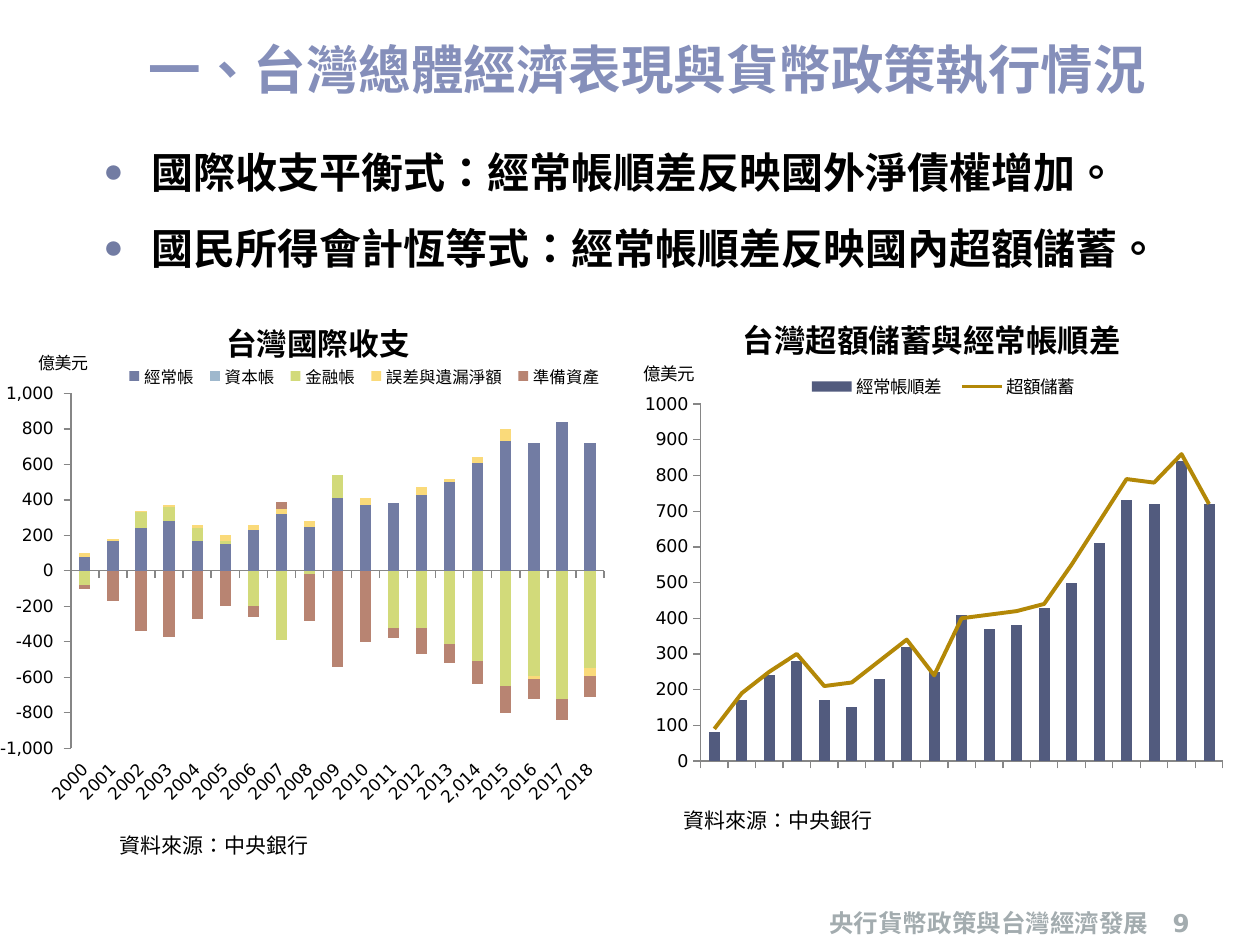
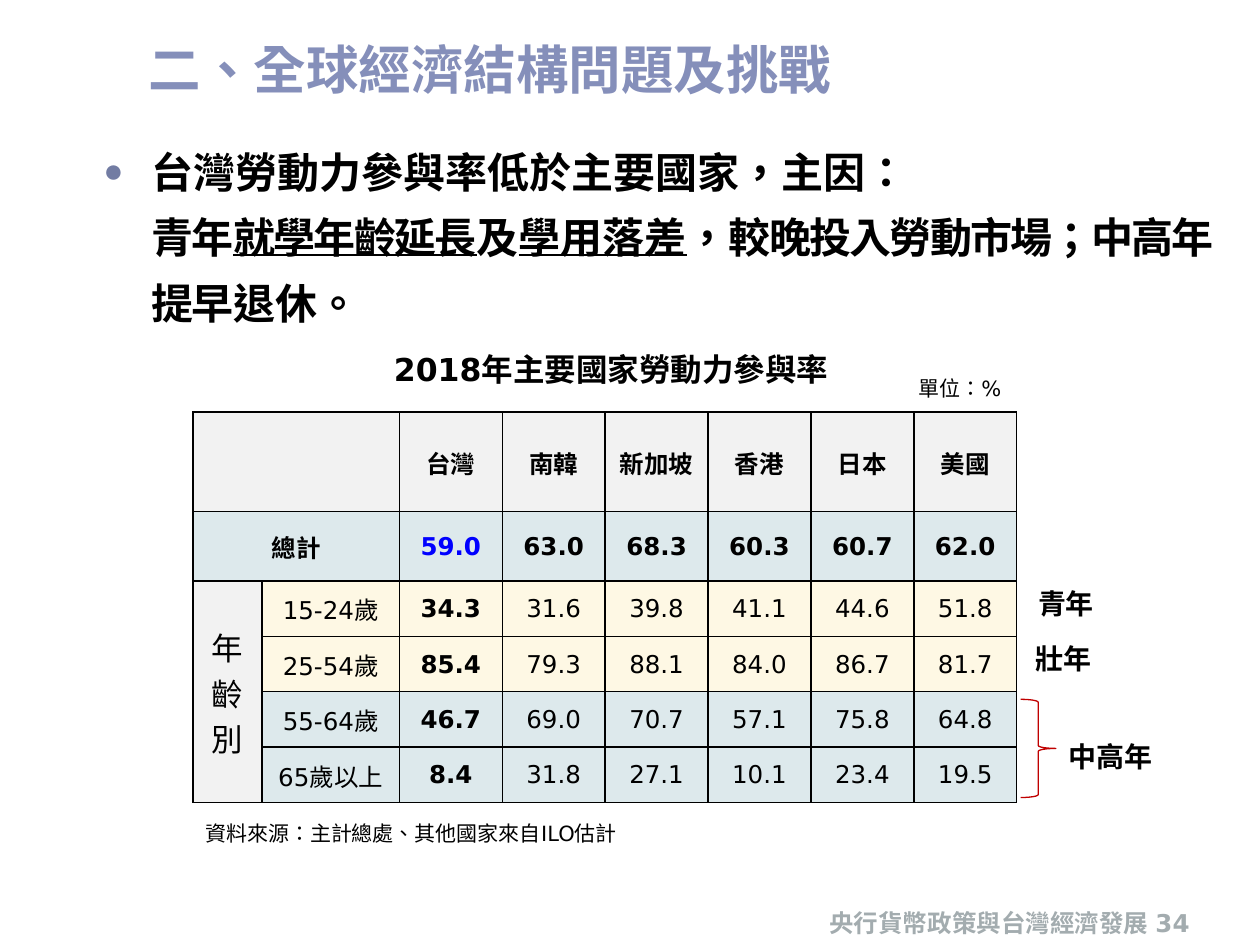
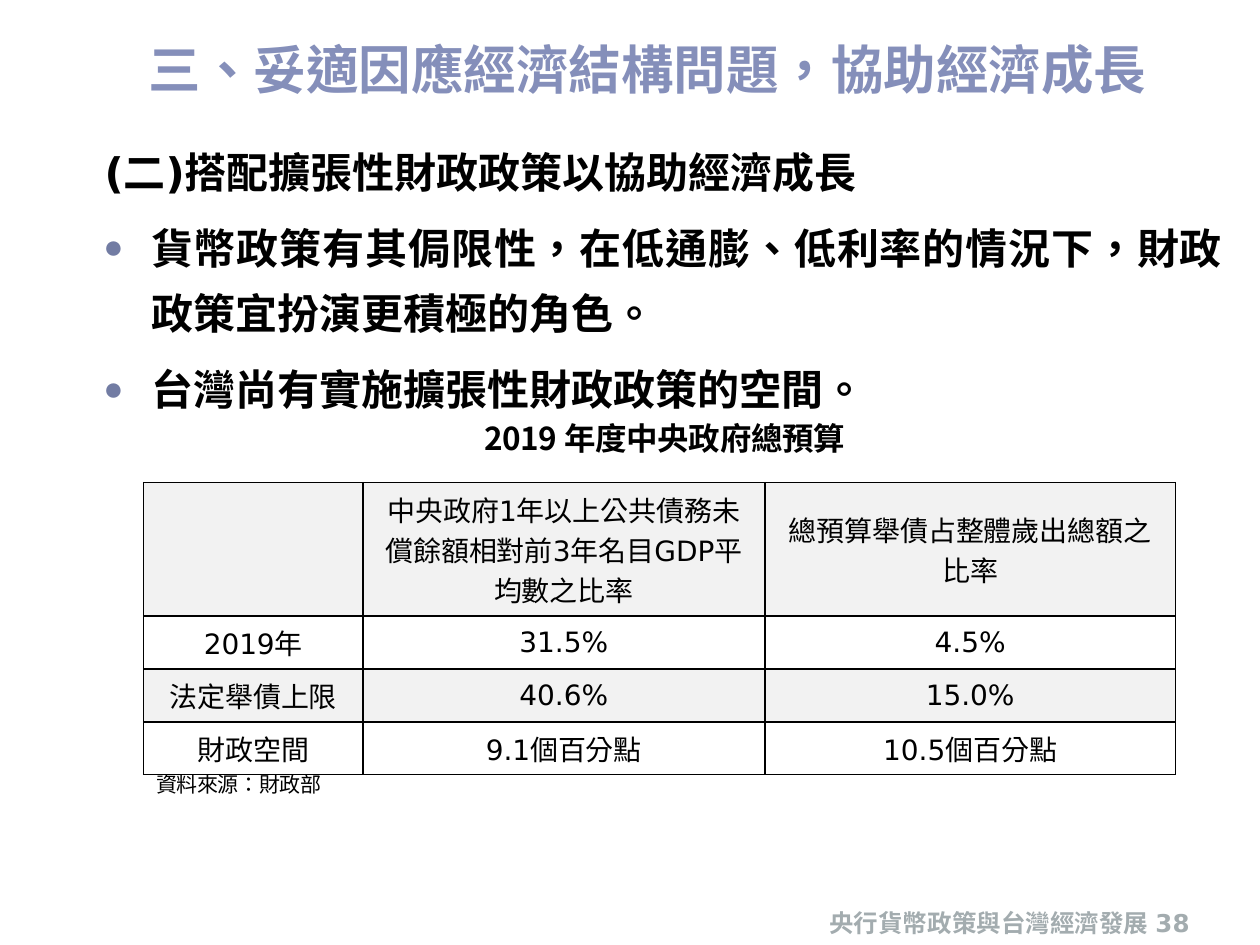
"""Builds three slides on monetary policy and the Taiwanese economy."""
from dataclasses import dataclass
from typing import Any, NamedTuple, Optional, Sequence

from lxml import etree
from pptx import Presentation
from pptx import util as u
from pptx.chart import data as cd
from pptx.dml import color as dml
from pptx.enum import chart as ch
from pptx.enum import shapes, text
from pptx.oxml import ns

COLORS = {
    "title": "858FBA", "bullet": "727CA3", "footer": "A3ACAF", "black": "000000",
    "blue": "0000FF", "red": "C00000", "gray": "F2F2F2", "mist": "DDE9EC",
    "cream": "FEF8E4", "axis": "868686", "navy": "525B7E", "gold": "B38807",
    "current": "727CA3", "capital": "9FB8CD", "financial": "D2DA7A",
    "errors": "FADA7A", "reserve": "B88472",
}
SANS, CJK, ARIAL = "DejaVu Sans", "Noto Sans CJK SC", "Arial"
FOOTER = "央行貨幣政策與台灣經濟發展"
ALIGN = text.PP_ALIGN
ANCHOR = text.MSO_ANCHOR
YEARS = [str(year) for year in range(2000, 2019)]
CURRENT = [80, 170, 240, 280, 170, 150, 230, 320, 250, 410,
           370, 380, 430, 500, 610, 730, 720, 840, 720]
EXCESS_SAVING = [90, 190, 250, 300, 210, 220, 280, 340, 240, 400,
                 410, 420, 440, 550, 670, 790, 780, 860, 720]
FINANCIAL = [-80, 0, 90, 80, 70, 20, -200, -390, -20, 130,
             0, -320, -320, -410, -510, -650, -590, -720, -550]
ERRORS = [20, 10, 10, 10, 20, 30, 30, 30, 30, 0, 40, 0, 40, 20, 30, 70, -20, 0, -40]
RESERVE = [-20, -170, -340, -370, -270, -200, -60, 40, -260, -540,
           -400, -60, -150, -110, -130, -150, -110, -120, -120]


class Box(NamedTuple):
    """Left, top, width and height in inches."""
    left: float
    top: float
    width: float
    height: float


class Span(NamedTuple):
    """A stretch of text in one format."""
    words: str
    size: float = 12
    bold: bool = False
    color: str = "black"
    font: str = SANS
    asian: str = SANS
    underline: bool = False
    spacing: float = 0


class Para(NamedTuple):
    """A paragraph with its spacing and indents."""
    spans: Sequence[Span]
    align: Any = ALIGN.LEFT
    left: float = 0
    first: float = 0
    line: Any = None
    after: float = 0
    bullet: bool = False


class Cell(NamedTuple):
    """A table cell."""
    words: str = ""
    fill: Optional[str] = None
    size: float = 14
    bold: bool = False
    color: str = "black"


class Series(NamedTuple):
    """A named chart series."""
    name: str
    values: Sequence[float]
    color: str


@dataclass
class ChartSpec:
    """What a chart shows and where its parts sit, as fractions of its frame."""
    box: Box
    kind: Any
    title: str
    title_at: tuple
    unit_at: tuple
    legend_at: tuple
    legend_size: float
    legend_side: Any
    plot_at: tuple
    low: int
    step: int
    years: Sequence[str]
    series: Sequence[Series]
    number_format: str = "General"
    line_series: bool = False


def assign(target: Any, **values: Any) -> None:
    """Set every given attribute."""
    for name, value in values.items():
        setattr(target, name, value)


def rgb(name: str) -> dml.RGBColor:
    """Return a palette colour."""
    return dml.RGBColor.from_string(COLORS[name])


def inches(box: Box) -> list:
    """Return a box as lengths."""
    return [u.Inches(value) for value in box]


def child(parent: Any, tag: str, **attributes: Any) -> Any:
    """Append an XML element."""
    return etree.SubElement(parent, ns.qn(tag), {k: str(v) for k, v in attributes.items()})


def add_span(paragraph: Any, span: Span) -> None:
    """Append a formatted run."""
    run = paragraph.add_run()
    run.text = span.words
    assign(run.font, size=u.Pt(span.size), bold=span.bold, name=span.font,
           underline=span.underline)
    run.font.color.rgb = rgb(span.color)
    properties = run._r.get_or_add_rPr()
    properties.set("lang", "zh-TW")
    child(properties, "a:ea", typeface=span.asian)
    if span.spacing:
        properties.set("spc", str(round(span.spacing * 100)))


def write(frame: Any, paras: Sequence[Para]) -> None:
    """Fill a text frame with paragraphs."""
    for index, para in enumerate(paras):
        paragraph = frame.add_paragraph() if index else frame.paragraphs[0]
        properties = paragraph._p.get_or_add_pPr()
        properties.set("marL", str(u.Inches(para.left)))
        properties.set("indent", str(u.Inches(para.first)))
        if para.bullet:
            child(child(properties, "a:buClr"), "a:srgbClr", val=COLORS["bullet"])
            child(properties, "a:buSzPct", val=80000)
            child(properties, "a:buFont", typeface=ARIAL)
            child(properties, "a:buChar", char="●")
        else:
            child(properties, "a:buNone")
        assign(paragraph, alignment=para.align, line_spacing=para.line,
               space_before=u.Pt(0), space_after=u.Pt(para.after))
        for span in para.spans:
            if span.words == "\n":
                paragraph.add_line_break()
            else:
                add_span(paragraph, span)


def add_text(slide: Any, box: Box, paras: Sequence[Para], **frame_format: Any) -> None:
    """Add a wrapped text box."""
    frame = slide.shapes.add_textbox(*inches(box)).text_frame
    assign(frame, word_wrap=True, **frame_format)
    write(frame, paras)


def add_label(slide: Any, box: Box, words: str, size: float = 12, bold: bool = False,
              align: Any = ALIGN.LEFT) -> None:
    """Add a one-line text box."""
    add_text(slide, box, [Para([Span(words, size, bold)], align)])


def add_body(slide: Any, paras: Sequence[Para]) -> None:
    """Add the main text."""
    add_text(slide, Box(0.43, 0.94, 9.37, 6.1), paras,
             margin_left=u.Inches(0.2), margin_top=u.Inches(0.1))


def body_point(*spans: Span, align: Any = ALIGN.JUSTIFY) -> Para:
    """Return a bulleted main paragraph."""
    return Para(spans, align, 0.57, -0.38, 1.3, 6, True)


def start_slide(deck: Any, number: int, *title: tuple) -> Any:
    """Add a slide with its title and footer."""
    slide = deck.slides.add_slide(deck.slide_layouts[5])
    heading = slide.shapes.title
    left, top, width, height = inches(Box(0.79, 0.24, 9.02, 0.71))
    assign(heading, left=left, top=top, width=width, height=height)
    assign(heading.text_frame, margin_left=u.Inches(0.39), vertical_anchor=ANCHOR.TOP,
           word_wrap=True, auto_size=text.MSO_AUTO_SIZE.NONE)
    write(heading.text_frame, [Para([Span(words, 30, True, "title", font, font)
                                     for words, font in title])])
    for box, words, align in ((Box(6.1, 7.09, 3.5, 0.4), FOOTER, ALIGN.CENTER),
                              (Box(8.94, 7.09, 0.6, 0.4), str(number), ALIGN.RIGHT)):
        add_text(slide, box, [Para([Span(words, 14, True, "footer")], align)],
                 vertical_anchor=ANCHOR.BOTTOM)
    return slide


def style_cell(cell: Any, content: Cell, margins: dict) -> None:
    """Give a table cell its borders, fill and text."""
    assign(cell, vertical_anchor=ANCHOR.MIDDLE, **margins)
    properties = cell._tc.get_or_add_tcPr()
    for side in ("L", "R", "T", "B"):
        border = child(properties, f"a:ln{side}", w=u.Pt(1))
        child(child(border, "a:solidFill"), "a:srgbClr", val=COLORS["black"])
    if content.fill:
        cell.fill.solid()
        cell.fill.fore_color.rgb = rgb(content.fill)
    else:
        cell.fill.background()
    if content.words:
        write(cell.text_frame, [
            Para([Span(words, content.size, content.bold, content.color, asian=CJK)],
                 ALIGN.CENTER) for words in content.words.split("\n")])


def add_grid(slide: Any, box: Box, widths: Sequence[float], heights: Sequence[float],
             rows: Sequence[Sequence[Cell]], margins: dict, merges: Sequence = ()) -> None:
    """Add a bordered table; each merge names two corners."""
    table = slide.shapes.add_table(len(heights), len(widths), *inches(box)).table
    assign(table, first_row=False, horz_banding=False)
    for column, width in zip(table.columns, widths):
        column.width = u.Inches(width)
    for row, height in zip(table.rows, heights):
        row.height = u.Inches(height)
    for r, contents in enumerate(rows):
        for c, content in enumerate(contents):
            style_cell(table.cell(r, c), content, margins)
    for start, end in merges:
        table.cell(*start).merge(table.cell(*end))


def place(part: Any, index: int, fractions: Sequence[float], inner: bool = False) -> None:
    """Fix a chart part at fractions of the chart frame."""
    layout = part.find(ns.qn("c:layout"))
    if layout is None:
        layout = child(part, "c:layout")
        part.insert(index, layout)
    manual = child(layout, "c:manualLayout")
    if inner:
        child(manual, "c:layoutTarget", val="inner")
    for mode in ("xMode", "yMode"):
        child(manual, f"c:{mode}", val="edge")
    for key, value in zip("xywh", fractions):
        child(manual, f"c:{key}", val=value)


def move_last_to_line(chart: Any) -> None:
    """Draw the last bar series as a line on the same axes."""
    area = chart.element.find(".//" + ns.qn("c:plotArea"))
    bars = area.find(ns.qn("c:barChart"))
    line = child(area, "c:lineChart")
    bars.addnext(line)
    child(line, "c:grouping", val="standard")
    child(line, "c:varyColors", val=0)
    series = bars.findall(ns.qn("c:ser"))[-1]
    for flag in series.findall(ns.qn("c:invertIfNegative")):
        series.remove(flag)
    line.append(series)
    child(line, "c:marker", val=1)
    for axis in bars.findall(ns.qn("c:axId")):
        child(line, "c:axId", val=axis.get("val"))


def set_chart_title(title: Any, words: str, size: float, bold: bool) -> None:
    """Write a chart or axis title."""
    write(title.text_frame, [Para([Span(words, size, bold)])])


def style_axes(chart: Any, spec: ChartSpec) -> None:
    """Set scales, ticks and labels."""
    years, amounts = chart.category_axis, chart.value_axis
    for axis in (years, amounts):
        assign(axis, has_major_gridlines=False, major_tick_mark=ch.XL_TICK_MARK.OUTSIDE,
               minor_tick_mark=ch.XL_TICK_MARK.NONE)
        axis.format.line.color.rgb = rgb("axis")
        axis.tick_labels.font.size = u.Pt(10)
    assign(amounts, minimum_scale=spec.low, maximum_scale=1000, major_unit=spec.step,
           has_title=True)
    assign(amounts.tick_labels, number_format=spec.number_format,
           number_format_is_linked=False)
    labels = ch.XL_TICK_LABEL_POSITION
    years.tick_label_position = labels.NONE if spec.line_series else labels.LOW
    chart.element.find(f".//{ns.qn('c:catAx')}//{ns.qn('a:bodyPr')}").set("rot", "-2700000")
    set_chart_title(amounts.axis_title, "億美元", 10, False)
    unit = chart.element.find(f".//{ns.qn('c:valAx')}/{ns.qn('c:title')}")
    place(unit, 1, spec.unit_at)
    body = unit.find(".//" + ns.qn("a:bodyPr"))
    body.set("rot", "0")
    body.set("vert", "horz")


def draw_chart(slide: Any, spec: ChartSpec) -> None:
    """Add a bar chart, with a line where the spec asks for one."""
    figures = cd.CategoryChartData()
    figures.categories = spec.years
    for series in spec.series:
        figures.add_series(series.name, series.values)
    chart = slide.shapes.add_chart(spec.kind, *inches(spec.box), figures).chart
    assign(chart.font, size=u.Pt(10), name=SANS)
    chart.font.color.rgb = rgb("black")
    assign(chart, has_title=True, has_legend=True)
    set_chart_title(chart.chart_title, spec.title, 18, True)
    assign(chart.legend, position=spec.legend_side, include_in_layout=False)
    chart.legend.font.size = u.Pt(spec.legend_size)
    style_axes(chart, spec)
    bars = chart.plots[0]
    assign(bars, gap_width=150, vary_by_categories=False,
           overlap=0 if spec.line_series else 100)
    for series, content in zip(bars.series, spec.series):
        series.format.fill.solid()
        series.format.fill.fore_color.rgb = rgb(content.color)
    if spec.line_series:
        move_last_to_line(chart)
        line = chart.plots[1].series[0]
        line.format.fill.background()
        line.format.line.color.rgb = rgb(spec.series[-1].color)
        line.format.line.width = u.Pt(2.25)
        line.marker.style = ch.XL_MARKER_STYLE.NONE
        line.smooth = False
    root = chart.element.find(ns.qn("c:chart"))
    title = root.find(ns.qn("c:title"))
    place(title, 1, spec.title_at)
    for overlay in title.findall(ns.qn("c:overlay")):
        overlay.set("val", "1")
    place(root.find(ns.qn("c:legend")), 1, spec.legend_at)
    place(root.find(ns.qn("c:plotArea")), 0, spec.plot_at, True)


def build_balance_slide(deck: Any) -> None:
    """Balance of payments and excess saving."""
    slide = start_slide(deck, 9, ("一、台灣總體經濟表現與貨幣政策執行情況", SANS))
    add_body(slide, [body_point(Span(words, 24, True)) for words in (
        "國際收支平衡式：經常帳順差反映國外淨債權增加。",
        "國民所得會計恆等式：經常帳順差反映國內超額儲蓄。")])
    for box in (Box(0.85, 6.56, 1.97, 0.3), Box(5.33, 6.36, 4.41, 0.3)):
        add_label(slide, box, "資料來源：中央銀行")
    draw_chart(slide, ChartSpec(
        Box(5.03, 2.41, 4.82, 3.99), ch.XL_CHART_TYPE.COLUMN_CLUSTERED,
        "台灣超額儲蓄與經常帳順差", (0.17, 0.02), (0.01, 0.11),
        (0.27, 0.14, 0.48, 0.05), 10, ch.XL_LEGEND_POSITION.TOP,
        (0.11, 0.2, 0.86, 0.71), 0, 100, YEARS,
        [Series("經常帳順差", CURRENT, "navy"), Series("超額儲蓄", EXCESS_SAVING, "gold")],
        line_series=True))
    draw_chart(slide, ChartSpec(
        Box(0, 2.33, 4.89, 4.08), ch.XL_CHART_TYPE.COLUMN_STACKED,
        "台灣國際收支", (0.34, 0.05), (0.03, 0.11),
        (0.17, 0.14, 0.82, 0.05), 9.6, ch.XL_LEGEND_POSITION.BOTTOM,
        (0.09, 0.2, 0.89, 0.71), -1000, 200,
        ["2,014" if year == "2014" else year for year in YEARS],
        [Series("經常帳", CURRENT, "current"), Series("資本帳", [0] * len(YEARS), "capital"),
         Series("金融帳", FINANCIAL, "financial"), Series("誤差與遺漏淨額", ERRORS, "errors"),
         Series("準備資產", RESERVE, "reserve")], "#,##0_ "))


def build_labour_slide(deck: Any) -> None:
    """Labour participation by country and age."""
    slide = start_slide(deck, 34, ("二、全球經濟結構問題及挑戰", SANS))
    base = Span("", 24, True, font=ARIAL)
    tight = base._replace(spacing=-1)
    add_body(slide, [body_point(
        base._replace(words="台灣勞動力參與率低於主要國家，主因："), Span("\n"),
        tight._replace(words="青年"), tight._replace(words="就學年齡延長", underline=True),
        tight._replace(words="及"), Span("學用落差", 24, True, underline=True),
        Span("，", 24, True), tight._replace(words="較晚投入勞動市場；中高年提早"),
        base._replace(words="退休。"), align=ALIGN.LEFT)])
    add_label(slide, Box(1.62, 2.73, 6.46, 0.4), "2018年主要國家勞動力參與率", 18, True,
              ALIGN.CENTER)
    add_label(slide, Box(1.53, 6.46, 4.42, 0.3), "資料來源：主計總處、其他國家來自ILO估計")
    for box, group in ((Box(8.14, 4.61, 0.71, 0.37), "青年"),
                       (Box(8.12, 5.04, 0.98, 0.37), "壯年"),
                       (Box(8.38, 5.82, 0.99, 0.37), "中高年")):
        add_label(slide, box, group, 16, True)
    brace = slide.shapes.add_shape(shapes.MSO_SHAPE.RIGHT_BRACE,
                                   *inches(Box(8.1, 5.55, 0.28, 0.78)))
    brace.shadow.inherit = False
    brace.fill.background()
    brace.line.color.rgb = rgb("red")
    brace.line.width = u.Pt(0.75)

    countries = ("台灣", "南韓", "新加坡", "香港", "日本", "美國")
    totals = ("59.0", "63.0", "68.3", "60.3", "60.7", "62.0")
    ages = (("15-24歲", "cream", ("34.3", "31.6", "39.8", "41.1", "44.6", "51.8")),
            ("25-54歲", "cream", ("85.4", "79.3", "88.1", "84.0", "86.7", "81.7")),
            ("55-64歲", "mist", ("46.7", "69.0", "70.7", "57.1", "75.8", "64.8")),
            ("65歲以上", "mist", ("8.4", "31.8", "27.1", "10.1", "23.4", "19.5")))
    rows = [[Cell(fill="gray")] * 2 + [Cell(name, "gray", bold=True) for name in countries],
            [Cell("總計", "mist", bold=True), Cell(fill="mist")]
            + [Cell(rate, "mist", bold=True, color="black" if i else "blue")
               for i, rate in enumerate(totals)]]
    for index, (age, fill, rates) in enumerate(ages):
        rows.append([Cell("" if index else "年\n齡\n別", "gray", 18), Cell(age, fill)]
                    + [Cell(rate, fill, bold=i == 0) for i, rate in enumerate(rates)])
    thin = u.Inches(0.01)
    add_grid(slide, Box(1.53, 3.27, 6.54, 3.09), [0.55, 1.09] + [4.9 / 6] * 6,
             [0.79, 0.55] + [0.44] * 4, rows,
             dict(margin_left=thin, margin_right=thin, margin_top=thin, margin_bottom=0),
             [((0, 0), (0, 1)), ((1, 0), (1, 1)), ((2, 0), (5, 0))])
    add_label(slide, Box(7.19, 2.93, 0.96, 0.3), "單位：%")


def build_fiscal_slide(deck: Any) -> None:
    """Room for fiscal policy."""
    slide = start_slide(deck, 38, ("三、", SANS), ("妥適因應", CJK),
                        ("經濟結構問題，協助經濟成長", SANS))
    heading = Para([Span("(二)搭配擴張性財政政策以協助經濟成長", 24, True)],
                   ALIGN.JUSTIFY, 0.2, 0, 1.3, 6)
    add_body(slide, [heading] + [body_point(Span(words, 24, True)) for words in (
        "貨幣政策有其侷限性，在低通膨、低利率的情況下，財政政策宜扮演更積極的角色。",
        "台灣尚有實施擴張性財政政策的空間。")])
    rows = (("", "中央政府1年以上公共債務未償餘額相對前3年名目GDP平均數之比率",
             "總預算舉債占整體歲出總額之比率"),
            ("2019年", "31.5%", "4.5%"),
            ("法定舉債上限", "40.6%", "15.0%"),
            ("財政空間", "9.1個百分點", "10.5個百分點"))
    add_grid(slide, Box(1.14, 3.83, 8.19, 2.32), [1.74, 3.19, 3.26], [1.06] + [0.42] * 3,
             [[Cell(words, None if r % 2 else "gray", 16) for words in row]
              for r, row in enumerate(rows)], {})
    for box, words, size, bold, align, anchor in (
            (Box(1.14, 6.11, 6.69, 0.34), "資料來源：財政部", 12, False, ALIGN.LEFT, ANCHOR.TOP),
            (Box(1.93, 3.37, 6.69, 0.34), "2019 年度中央政府總預算", 18, True,
             ALIGN.CENTER, ANCHOR.MIDDLE)):
        span = Span(words, size, bold, font=CJK, asian=CJK, spacing=-0.2)
        add_text(slide, box, [Para([span], align, 0.6, -0.6, u.Pt(12))],
                 vertical_anchor=anchor)


def main() -> None:
    """Build and save the deck."""
    deck = Presentation()
    assign(deck, slide_width=u.Inches(10), slide_height=u.Inches(7.5))
    for build in (build_balance_slide, build_labour_slide, build_fiscal_slide):
        build(deck)
    deck.save("out.pptx")


if __name__ == "__main__":
    main()
